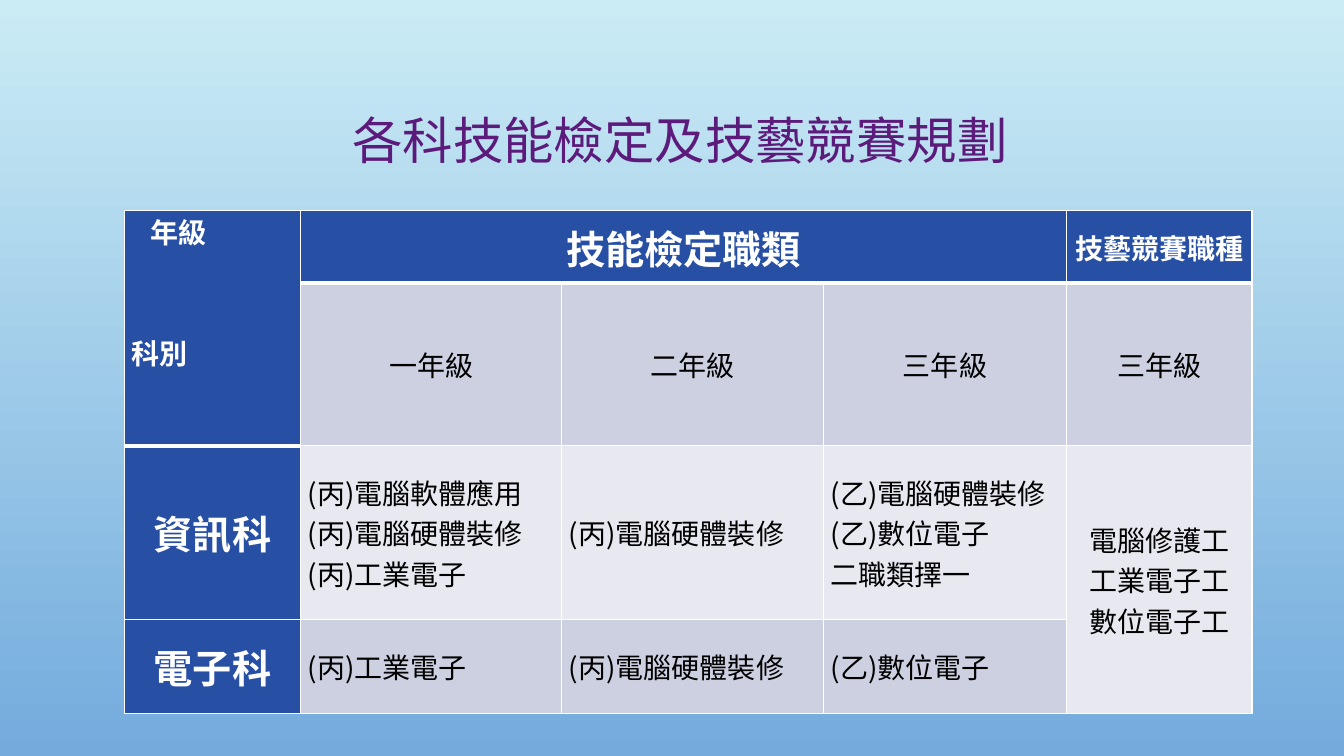
from pptx import Presentation
from pptx.dml.color import RGBColor
from pptx.enum.text import MSO_ANCHOR, PP_ALIGN
from pptx.oxml import parse_xml
from pptx.oxml.ns import nsdecls
from pptx.util import Pt

TITLE = "各科技能檢定及技藝競賽規劃"
FONT = "Noto Sans CJK SC"
COLORS = {
    "sky_top": "CBECF5", "sky_bottom": "73ABDD", "title": "5C1B7B",
    "head": "274FA4", "dark_band": "CDD0E0", "light_band": "E8E9F0",
    "white": "FFFFFF", "black": "000000",
}
# Each cell: lines, style name; None is covered by a merged cell
ROWS = [
    [(["年級", "科別"], "corner"), (["技能檢定職類"], "big"), None, None,
     (["技藝競賽職種"], "head")],
    [None] + [([grade], "grade") for grade in ("一年級", "二年級", "三年級", "三年級")],
    [(["資訊科"], "big"),
     (["(丙)電腦軟體應用", "(丙)電腦硬體裝修", "(丙)工業電子"], "left"),
     (["(丙)電腦硬體裝修"], "left"),
     (["(乙)電腦硬體裝修", "(乙)數位電子", "二職類擇一"], "left"),
     (["電腦修護工", "工業電子工", "數位電子工"], "center")],
    [(["電子科"], "big"), (["(丙)工業電子"], "left"),
     (["(丙)電腦硬體裝修"], "left"), (["(乙)數位電子"], "left"), None],
]
MERGES = [((0, 0), (1, 0)), ((0, 1), (0, 3)), ((2, 4), (3, 4))]
COL_WIDTHS = [126, 186.5, 187, 173.5, 132.5]
ROW_HEIGHTS = [52, 116, 124, 67]
TABLE_LEFT, TABLE_TOP = 88.8, 150.4

# Style: fill (None follows the row band), text colour, size, bold, alignment
STYLES = {
    "corner": ("head", "white", 20, True, PP_ALIGN.LEFT),
    "big": ("head", "white", 28, True, PP_ALIGN.CENTER),
    "head": ("head", "white", 20, True, PP_ALIGN.CENTER),
    "grade": ("dark_band", "black", 20, False, PP_ALIGN.CENTER),
    "left": (None, "black", 20, False, PP_ALIGN.LEFT),
    "center": (None, "black", 20, False, PP_ALIGN.CENTER),
}


def rgb(name):
    return RGBColor.from_string(COLORS[name])


def add_run(p, text, size, color, bold=False):
    r = p.add_run()
    r.text = text
    r.font.name = FONT
    r.font.size = Pt(size)
    r.font.bold = bold
    r.font.color.rgb = rgb(color)
    r._r.get_or_add_rPr().append(
        parse_xml(f'<a:ea {nsdecls("a")} typeface="{FONT}"/>'))


def set_borders(cell, top, bottom):
    tc_pr = cell._tc.get_or_add_tcPr()
    for side, width in (("L", 1), ("R", 1), ("T", top), ("B", bottom)):
        tc_pr.append(parse_xml(
            f'<a:ln{side} {nsdecls("a")} w="{Pt(width)}"><a:solidFill>'
            f'<a:srgbClr val="{COLORS["white"]}"/></a:solidFill></a:ln{side}>'))


def fill_cell(cell, lines, style, band):
    fill, color, size, bold, align = STYLES[style]
    cell.margin_left = cell.margin_right = Pt(5)
    cell.margin_top = cell.margin_bottom = 0
    cell.vertical_anchor = MSO_ANCHOR.TOP if style == "corner" else MSO_ANCHOR.MIDDLE
    cell.fill.solid()
    cell.fill.fore_color.rgb = rgb(fill or band)
    tf = cell.text_frame
    for i, line in enumerate(lines):
        p = tf.add_paragraph() if i else tf.paragraphs[0]
        p.alignment = align
        if style == "corner":
            if i:
                p.space_before = Pt(58)
            else:
                p._p.get_or_add_pPr().set("marL", str(Pt(13.5)))
        add_run(p, line, size, color, bold)


prs = Presentation()
prs.slide_width, prs.slide_height = Pt(960), Pt(540)
s = prs.slides.add_slide(prs.slide_layouts[5])

sky = s.background.fill
sky.gradient()
sky.gradient_angle = 270
for stop, name, position in zip(sky.gradient_stops, ("sky_top", "sky_bottom"), (0, 1)):
    stop.color.rgb = rgb(name)
    stop.position = position

title = s.shapes.title
title.left, title.top, title.width, title.height = Pt(77.8), Pt(54.7), Pt(815.8), Pt(95.8)
title.text_frame.vertical_anchor = MSO_ANCHOR.MIDDLE
p = title.text_frame.paragraphs[0]
p.alignment = PP_ALIGN.CENTER
p.line_spacing = 0.9
add_run(p, TITLE, 36, "title")

table = s.shapes.add_table(
    len(ROW_HEIGHTS), len(COL_WIDTHS), Pt(TABLE_LEFT), Pt(TABLE_TOP),
    Pt(sum(COL_WIDTHS)), Pt(sum(ROW_HEIGHTS))).table
table.first_row = table.horz_banding = False
for column, width in zip(table.columns, COL_WIDTHS):
    column.width = Pt(width)
for row, height in zip(table.rows, ROW_HEIGHTS):
    row.height = Pt(height)
for start, end in MERGES:
    table.cell(*start).merge(table.cell(*end))

for r, row in enumerate(ROWS):
    band = "dark_band" if r % 2 else "light_band"
    for c, content in enumerate(row):
        cell = table.cell(r, c)
        head_end = 1 if c == 0 else 0
        set_borders(cell, 3 if r == head_end + 1 else 1, 3 if r <= head_end else 1)
        if content:
            fill_cell(cell, *content, band)

prs.save("out.pptx")
